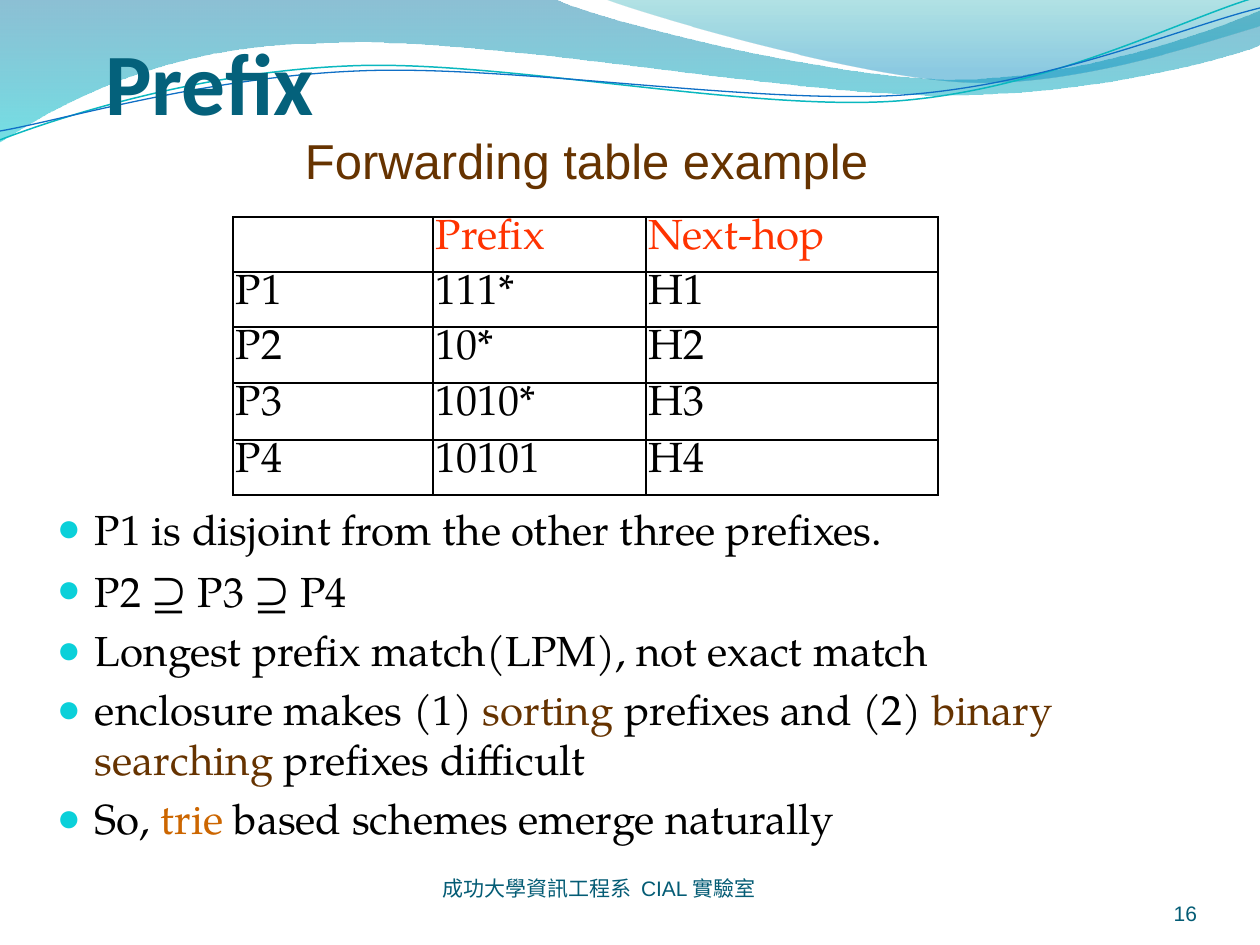
from math import cos, radians, sin

from lxml import etree
from pptx import Presentation
from pptx.dml.color import RGBColor
from pptx.enum.text import MSO_ANCHOR, PP_ALIGN
from pptx.oxml.ns import qn
from pptx.util import Pt

EMU_PER_PX = 914400 / 126
TOP, BOTTOM = MSO_ANCHOR.TOP, MSO_ANCHOR.BOTTOM
LEFT, CENTER, RIGHT = PP_ALIGN.LEFT, PP_ALIGN.CENTER, PP_ALIGN.RIGHT
SERIF, SANS, CJK, HEAD = "TeX Gyre Pagella", "Arial", "Noto Sans CJK SC", "Calibri"
BLACK, BROWN, ORANGE, RED = "000000", "663300", "CC6600", "FF3300"
TITLE_TEAL, FOOTER_TEAL, BULLET_CYAN = "04617B", "045C75", "0BD0D9"
SWOOSH_TILT = -2.7

# Each segment is a list of points: one for a line, three for a Bezier curve.
UPPER_WAVE = [[(0, -1)], [(554, -1)], [(600, 21), (837, 79), (955, 79)],
              [(1075, 79), (1207, 33), (1260, 11)], [(1261, 45)],
              [(1239, 55), (1096, 96), (940, 95)], [(784, 95), (481, 35), (324, 43)],
              [(163, 44), (58, 105), (-1, 142)], [(0, -1)]]
RIGHT_WAVE = [[(604, -1)], [(641, 14), (859, 78), (969, 82)],
              [(1079, 86), (1211, 40), (1260, 26)], [(1260, 0)], [(604, -1)]]
TEAL_LINE = [[(0, 140)], [(60, 117), (199, 72), (349, 66)],
             [(498, 59), (747, 112), (898, 101)], [(1050, 89), (1182, 19), (1257, -3)]]
BLUE_LINE = [[(0, 131)], [(59, 121), (207, 77), (357, 71)],
             [(508, 64), (756, 105), (903, 95)], [(1053, 84), (1185, 26), (1260, 8)]]

TABLE_ROWS = [("", "Prefix", "Next-hop"), ("P1", "111*", "H1"), ("P2", "10*", "H2"),
              ("P3", "1010*", "H3"), ("P4", "10101", "H4")]
COLUMN_WIDTHS = [200, 213, 292]
ROW_HEIGHTS = [55, 55, 56, 57, 55]

# Each point is a list of (text, colour, size).
POINTS = [
    [("P1 is disjoint from the other three prefixes.", BLACK, 24)],
    [("P2 ", BLACK, 24), ("⊇", BLACK, 26), (" P3 ", BLACK, 24),
     ("⊇", BLACK, 26), (" P4", BLACK, 24)],
    [("Longest prefix match(LPM), not exact match", BLACK, 24)],
    [("enclosure makes (1) ", BLACK, 24), ("sorting", BROWN, 24),
     (" prefixes and (2) ", BLACK, 24), ("binary searching", BROWN, 24),
     (" prefixes difficult", BLACK, 24)],
    [("So, ", BLACK, 24), ("trie", ORANGE, 24),
     (" based schemes emerge naturally", BLACK, 24)],
]


def px(length):
    return round(length * EMU_PER_PX)


def color(hex_text):
    return RGBColor.from_string(hex_text)


def turn(point, center, degrees):
    angle = radians(degrees)
    dx, dy = point[0] - center[0], point[1] - center[1]
    return (center[0] + dx * cos(angle) - dy * sin(angle),
            center[1] + dx * sin(angle) + dy * cos(angle))


def add_outline(page, segments, close):
    """Build the outline through all points, then join each three into a curve."""
    points = [(px(x), px(y)) for segment in segments for x, y in segment]
    builder = page.shapes.build_freeform(*points[0], scale=1.0)
    builder.add_line_segments(points[1:], close=close)
    shape = builder.convert_to_shape()
    shape.shadow.inherit = False
    steps = iter(list(shape._element.iter(qn("a:lnTo"))))
    for segment in segments[1:]:
        parts = [next(steps) for _ in segment]
        if len(parts) == 3:
            curve = etree.Element(qn("a:cubicBezTo"))
            parts[0].addprevious(curve)
            for part in parts:
                curve.append(part[0])
                part.getparent().remove(part)
    return shape


def add_wave(page, segments, stops):
    """Stops are (position, colour, opacity percent) from top to bottom."""
    shape = add_outline(page, segments, True)
    shape.line.fill.background()
    shape.fill.gradient()
    shape.fill.gradient_angle = 270
    for stop, (position, hex_text, _) in zip(shape.fill.gradient_stops, stops):
        stop.position = position
        stop.color.rgb = color(hex_text)
    tints = shape._element.spPr.iter(qn("a:srgbClr"))
    for tint, (_, _, opacity) in zip(tints, stops):
        etree.SubElement(tint, qn("a:alpha"), val=str(opacity * 1000))


def add_swoosh(page, segments, center, hex_text, width):
    level = [[turn(point, center, -SWOOSH_TILT) for point in segment]
             for segment in segments]
    shape = add_outline(page, level, False)
    shape.rotation = SWOOSH_TILT
    shape.fill.background()
    shape.line.color.rgb = color(hex_text)
    shape.line.width = Pt(width)


def add_span(para, text, font, size, hex_text, bold=False):
    span = para.add_run()
    span.text = text
    span.font.name = font
    span.font.size = Pt(size)
    span.font.bold = bold
    span.font.color.rgb = color(hex_text)
    if font == CJK:
        etree.SubElement(span._r.get_or_add_rPr(), qn("a:ea"), typeface=font)


def add_box(page, left, top, width, height, anchor=TOP, margins=(13, 6, 13, 6), wrap=True):
    """Margins are left, top, right, bottom."""
    box = page.shapes.add_textbox(px(left), px(top), px(width), px(height))
    frame = box.text_frame
    frame.word_wrap = wrap
    frame.vertical_anchor = anchor
    (frame.margin_left, frame.margin_top,
     frame.margin_right, frame.margin_bottom) = map(px, margins)
    return frame


def add_label(page, bounds, spans, align=LEFT, **frame_options):
    para = add_box(page, *bounds, **frame_options).paragraphs[0]
    para.alignment = align
    for span in spans:
        add_span(para, *span)


def add_borders(cell):
    properties = cell._tc.get_or_add_tcPr()
    for side in ("a:lnL", "a:lnR", "a:lnT", "a:lnB"):
        line = etree.SubElement(properties, qn(side), w=str(Pt(1)))
        fill = etree.SubElement(line, qn("a:solidFill"))
        etree.SubElement(fill, qn("a:srgbClr"), val=BLACK)


def add_forwarding_table(page, left, top):
    table = page.shapes.add_table(
        len(TABLE_ROWS), len(COLUMN_WIDTHS), px(left), px(top),
        px(sum(COLUMN_WIDTHS)), px(sum(ROW_HEIGHTS))).table
    table.first_row = table.horz_banding = False
    for column, width in zip(table.columns, COLUMN_WIDTHS):
        column.width = px(width)
    for row, height in zip(table.rows, ROW_HEIGHTS):
        row.height = px(height)
    for r, texts in enumerate(TABLE_ROWS):
        for c, text in enumerate(texts):
            cell = table.cell(r, c)
            cell.margin_left = cell.margin_right = px(3)
            cell.margin_top = cell.margin_bottom = px(2)
            add_borders(cell)
            cell.fill.background()
            if text:
                add_span(cell.text_frame.paragraphs[0], text, SERIF, 24,
                         BLACK if r else RED)


def add_bullet(para):
    properties = para._p.get_or_add_pPr()
    properties.set("marL", str(px(38)))
    properties.set("indent", str(px(-38)))
    tint = etree.SubElement(properties, qn("a:buClr"))
    etree.SubElement(tint, qn("a:srgbClr"), val=BULLET_CYAN)
    etree.SubElement(properties, qn("a:buSzPct"), val="95000")
    etree.SubElement(properties, qn("a:buFont"), typeface=SANS)
    etree.SubElement(properties, qn("a:buChar"), char="●")


def add_points(page, *bounds):
    frame = add_box(page, *bounds)
    for i, spans in enumerate(POINTS):
        para = frame.add_paragraph() if i else frame.paragraphs[0]
        add_bullet(para)
        if i:
            para.space_before = Pt(4.8)
        for text, hex_text, size in spans:
            add_span(para, text, SERIF, size, hex_text)


def main():
    deck = Presentation()
    deck.slide_width, deck.slide_height = px(1260), px(945)
    page = deck.slides.add_slide(deck.slide_layouts[6])

    add_wave(page, UPPER_WAVE, [(0, "0074A1", 45), (1, "00C6CF", 55)])
    add_wave(page, RIGHT_WAVE, [(0, "00A1A9", 30), (0.8, "008BBF", 45)])
    add_swoosh(page, TEAL_LINE, (629, 72), "0AB8BF", 0.85)
    add_swoosh(page, BLUE_LINE, (629, 74), "0F6FC6", 0.75)

    flush = (0, 0, 0, 0)
    add_label(page, (368, 875, 462, 26),
              [("成功大學資訊工程系 ", CJK, 12, FOOTER_TEAL), (" CIAL", SANS, 12, FOOTER_TEAL),
               (" 實驗室", CJK, 12, FOOTER_TEAL)], CENTER, anchor=BOTTOM, margins=flush)
    add_label(page, (1092, 876, 105, 50), [("16", SANS, 12, FOOTER_TEAL)],
              RIGHT, anchor=BOTTOM, margins=flush)
    add_label(page, (105, 26, 1052, 107), [("Prefix", HEAD, 50, TITLE_TEAL, True)],
              anchor=BOTTOM, margins=(0, 6, 0, 0))
    add_forwarding_table(page, 233, 217)
    add_points(page, 44, 497, 1160, 307)
    add_label(page, (292, 124, 591, 72),
              [("Forwarding table example", SANS, 28, BROWN)], wrap=False)
    deck.save("out.pptx")


if __name__ == "__main__":
    main()
